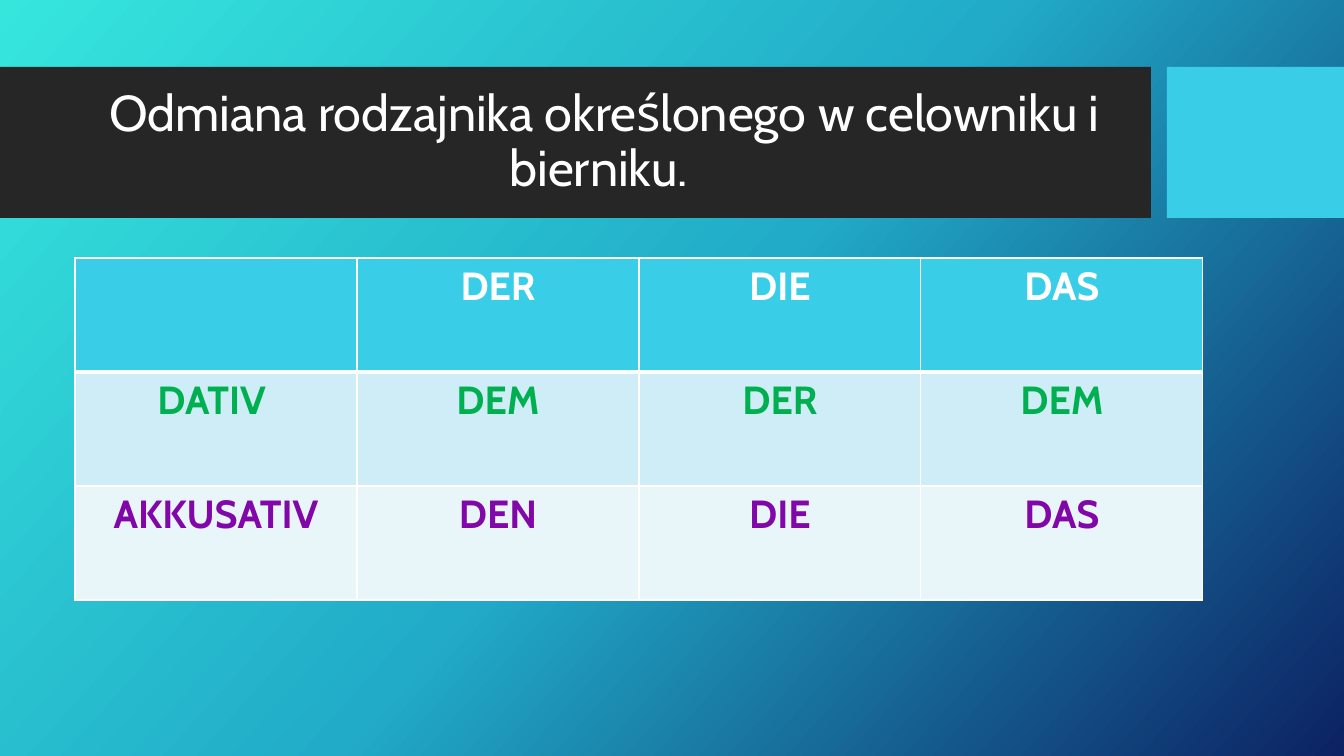
from copy import deepcopy

from lxml import etree
from pptx import Presentation
from pptx import util as u
from pptx.dml.color import RGBColor
from pptx.enum import shapes, text
from pptx.oxml.ns import qn

FONT = "Cabin"
WHITE = RGBColor(0xFF, 0xFF, 0xFF)
CHARCOAL = RGBColor(0x26, 0x26, 0x26)
CYAN = RGBColor(0x39, 0xCD, 0xE7)
PALE = RGBColor(0xCE, 0xED, 0xF6)
PALEST = RGBColor(0xE8, 0xF6, 0xFA)
GREEN = RGBColor(0x00, 0xB0, 0x50)
PURPLE = RGBColor(0x82, 0x07, 0xA9)
BACKGROUND = [
    (0, RGBColor(0x36, 0xE6, 0xDD)),
    (0.5, RGBColor(0x21, 0xAB, 0xC8)),
    (1, RGBColor(0x0C, 0x22, 0x63)),
]

# Row texts, text colour, fill
ROWS = [
    (["", "DER", "DIE", "DAS"], WHITE, CYAN),
    (["DATIV ", "DEM", "DER", "DEM"], GREEN, PALE),
    (["AKKUSATIV", "DEN", "DIE", "DAS"], PURPLE, PALEST),
]
COL_WIDTH, ROW_HEIGHT = 282, 114


def px(n):
    return u.Emu(round(n * 914400 / 100.8))


def set_background(s):
    fill = s.background.fill
    fill.gradient()
    fill.gradient_angle = 360 - 42
    stops = s.element.find(".//" + qn("a:gsLst"))
    stops.append(deepcopy(stops[-1]))
    for stop, (position, color) in zip(fill.gradient_stops, BACKGROUND):
        stop.position = position
        stop.color.rgb = color


def add_bar(s, x, y, w, h, color):
    sp = s.shapes.add_shape(shapes.MSO_SHAPE.RECTANGLE, px(x), px(y), px(w), px(h))
    sp.shadow.inherit = False
    sp.fill.solid()
    sp.fill.fore_color.rgb = color
    sp.line.fill.background()


def format_paragraph(p, size, color, bold=False):
    p.alignment = text.PP_ALIGN.CENTER
    for font in [p.font] + [r.font for r in p.runs]:
        font.name = FONT
        font.size = u.Pt(size)
        font.bold = bold
        font.color.rgb = color


def set_title(s, x, y, w, h, words):
    sp = s.shapes.title
    sp.left, sp.top, sp.width, sp.height = px(x), px(y), px(w), px(h)
    tf = sp.text_frame
    tf.text = words
    tf.word_wrap = True
    tf.auto_size = text.MSO_AUTO_SIZE.NONE
    tf.vertical_anchor = text.MSO_ANCHOR.MIDDLE
    tf.paragraphs[0].line_spacing = 0.9
    format_paragraph(tf.paragraphs[0], 36, WHITE)
    s.shapes.element.append(sp.element)  # bring in front of the bars


def set_border(cell, side, width):
    tc_pr = cell._tc.get_or_add_tcPr()
    ln = etree.SubElement(tc_pr, qn(f"a:ln{side}"), w=str(u.Pt(width)))
    solid = etree.SubElement(ln, qn("a:solidFill"))
    etree.SubElement(solid, qn("a:srgbClr"), val=str(WHITE))


def add_article_table(s, x, y):
    n_rows, n_cols = len(ROWS), len(ROWS[0][0])
    table = s.shapes.add_table(n_rows, n_cols, px(x), px(y),
                               px(COL_WIDTH * n_cols), px(ROW_HEIGHT * n_rows)).table
    for column in table.columns:
        column.width = px(COL_WIDTH)
    for i, (words, color, fill) in enumerate(ROWS):
        table.rows[i].height = px(ROW_HEIGHT)
        for cell, word in zip(table.rows[i].cells, words):
            # Thick rule between the header and the body
            for side in "LRTB":
                thick = (i, side) in [(0, "B"), (1, "T")]
                set_border(cell, side, 3 if thick else 1)
            cell.fill.solid()
            cell.fill.fore_color.rgb = fill
            cell.text_frame.text = word
            format_paragraph(cell.text_frame.paragraphs[0], 28, color, bold=True)


def main():
    prs = Presentation()
    prs.slide_width, prs.slide_height = px(1344), px(756)
    s = prs.slides.add_slide(prs.slide_layouts[5])
    set_background(s)

    # Title band
    add_bar(s, 0, 67, 1151, 151, CHARCOAL)
    add_bar(s, 1167, 67, 177, 151, CYAN)
    set_title(s, 75, 83, 1059, 119,
              "Odmiana rodzajnika określonego w celowniku i bierniku. ")

    # Declension of the definite article
    add_article_table(s, 75, 258)

    prs.save("out.pptx")


if __name__ == "__main__":
    main()
